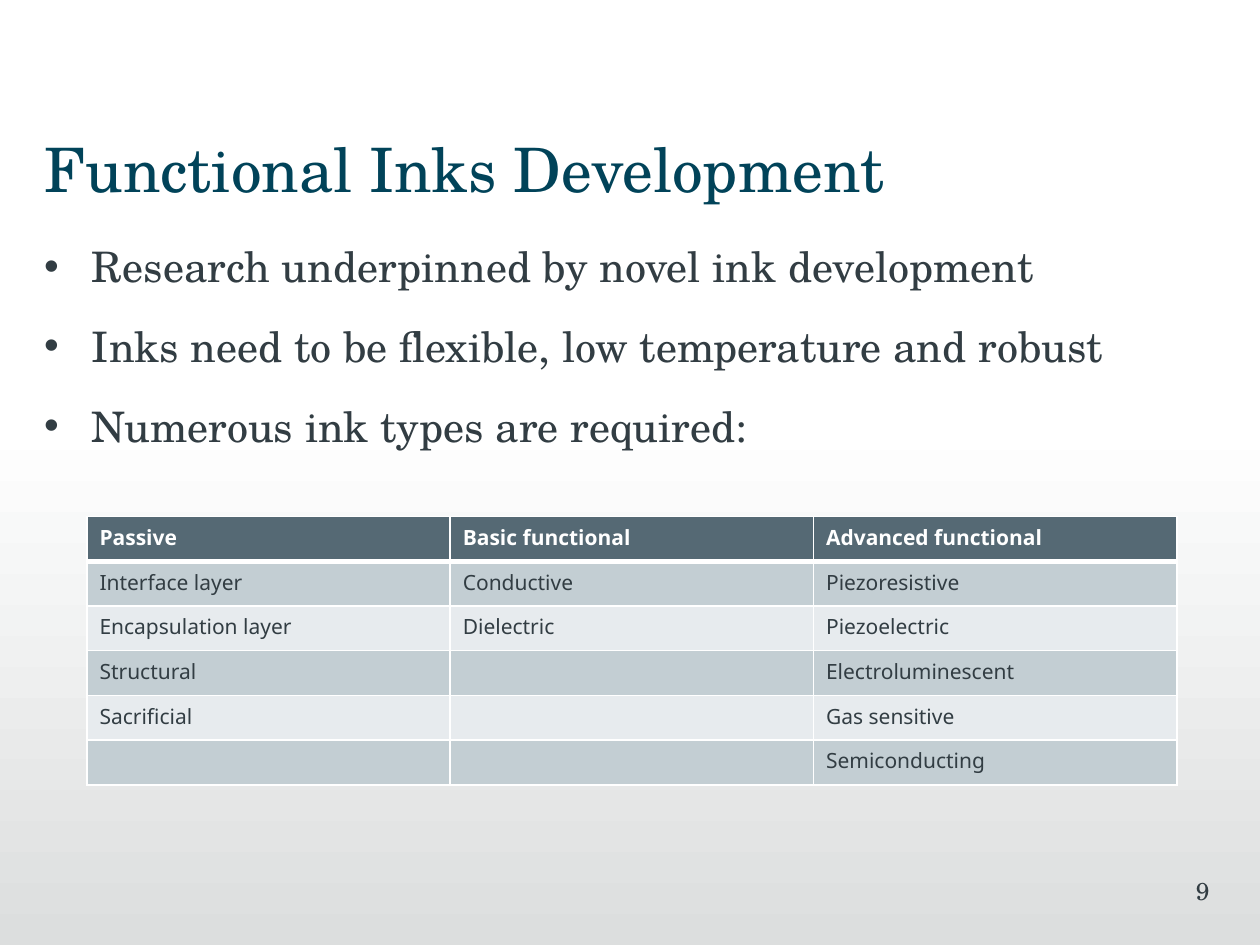
from lxml import etree
from pptx import Presentation
from pptx import util as u
from pptx.dml.color import RGBColor
from pptx.enum import shapes, text
from pptx.oxml import ns

WHITE = RGBColor(0xFF, 0xFF, 0xFF)
FADE = RGBColor(0xDC, 0xDE, 0xDE)
TEAL = RGBColor(0x01, 0x43, 0x59)
INK = RGBColor(0x32, 0x3D, 0x43)
HEADER = RGBColor(0x55, 0x69, 0x74)
BANDS = [RGBColor(0xE7, 0xEB, 0xEE), RGBColor(0xC3, 0xCE, 0xD3)]

BULLETS = [
    "Research underpinned by novel ink development",
    "Inks need to be flexible, low temperature and robust",
    "Numerous ink types are required:",
]
INKS = [
    ["Passive", "Basic functional", "Advanced functional"],
    ["Interface layer", "Conductive", "Piezoresistive"],
    ["Encapsulation layer", "Dielectric", "Piezoelectric"],
    ["Structural", "", "Electroluminescent"],
    ["Sacrificial", "", "Gas sensitive"],
    ["", "", "Semiconducting"],
]


def write(p, words, size=24, font="TeX Gyre Schola", color=INK, bold=False,
          align=text.PP_ALIGN.LEFT):
    p.alignment = align
    if not words:
        p._p.get_or_add_endParaRPr().set("sz", str(size * 100))
        return
    r = p.add_run()
    r.text = words
    r.font.size = u.Pt(size)
    r.font.name = font
    r.font.bold = bold
    r.font.color.rgb = color


def add_bullet(p, indent):
    pPr = p._p.get_or_add_pPr()
    pPr.set("marL", str(indent))
    pPr.set("indent", str(-indent))
    etree.SubElement(pPr, ns.qn("a:buFont")).set("typeface", "Arial")
    etree.SubElement(pPr, ns.qn("a:buChar")).set("char", "•")


def add_borders(cell, bottom):
    tcPr = cell._tc.get_or_add_tcPr()
    widths = {"a:lnL": 1, "a:lnR": 1, "a:lnT": 1, "a:lnB": bottom}
    for i, (tag, width) in enumerate(widths.items()):
        ln = etree.Element(ns.qn(tag), w=str(u.Pt(width)))
        fill = etree.SubElement(ln, ns.qn("a:solidFill"))
        etree.SubElement(fill, ns.qn("a:srgbClr")).set("val", str(WHITE))
        tcPr.insert(i, ln)


class Deck:
    def __init__(self, prs):
        self.s = prs.slides.add_slide(prs.slide_layouts[5])

    def frame(self, sp, left=0.0, right=0.1):
        tf = sp.text_frame
        tf.word_wrap = True
        tf.auto_size = text.MSO_AUTO_SIZE.NONE
        tf.vertical_anchor = text.MSO_ANCHOR.TOP
        tf.margin_left, tf.margin_right = u.Inches(left), u.Inches(right)
        tf.margin_top = tf.margin_bottom = u.Inches(0.05)
        return tf

    def backdrop(self, *box):
        sp = self.s.shapes.add_shape(shapes.MSO_SHAPE.RECTANGLE, *map(u.Inches, box))
        sp.shadow.inherit = False
        sp.line.fill.background()
        sp.fill.gradient()
        sp.fill.gradient_angle = 270
        for stop, color, position in zip(sp.fill.gradient_stops, (WHITE, FADE), (0, 1)):
            stop.color.rgb = color
            stop.position = position
        self.s.shapes._spTree.insert(2, sp._element)

    def title(self, words, *box):
        sp = self.s.shapes.title
        sp.left, sp.top, sp.width, sp.height = map(u.Inches, box)
        write(self.frame(sp).paragraphs[0], words, size=35, color=TEAL)

    def bullets(self, lines, *box):
        tf = self.frame(self.s.shapes.add_textbox(*map(u.Inches, box)))
        for i, line in enumerate(lines):
            p = tf.add_paragraph() if i else tf.paragraphs[0]
            add_bullet(p, u.Inches(0.38))
            p.space_after = u.Pt(16.8)
            write(p, line)

    def number(self, words, *box):
        sp = self.s.shapes.add_textbox(*map(u.Inches, box))
        tf = self.frame(sp, left=0.1, right=0)
        write(tf.paragraphs[0], words, size=14, align=text.PP_ALIGN.RIGHT)

    def table(self, rows, *box):
        tbl = self.s.shapes.add_table(len(rows), len(rows[0]), *map(u.Inches, box)).table
        for i, row in enumerate(rows):
            head = i == 0
            for j, words in enumerate(row):
                cell = tbl.cell(i, j)
                cell.fill.solid()
                cell.fill.fore_color.rgb = HEADER if head else BANDS[i % 2]
                add_borders(cell, 3 if head else 1)
                write(cell.text_frame.paragraphs[0], words, size=12, font="Noto Sans",
                      color=WHITE if head else INK, bold=head)


def main():
    prs = Presentation()
    prs.slide_width, prs.slide_height = u.Inches(10), u.Inches(7.5)
    deck = Deck(prs)
    deck.backdrop(-0.09, 3.33, 10.09, 4.17)
    deck.title("Functional Inks Development", 0.35, 0.99, 9.29, 0.71)
    deck.bullets(BULLETS, 0.35, 1.86, 9.29, 0.84)
    deck.number("9", 7.52, 6.9, 2.08, 0.5)
    deck.table(INKS, 0.69, 4.1, 8.65, 2.13)
    prs.save("out.pptx")


if __name__ == "__main__":
    main()
